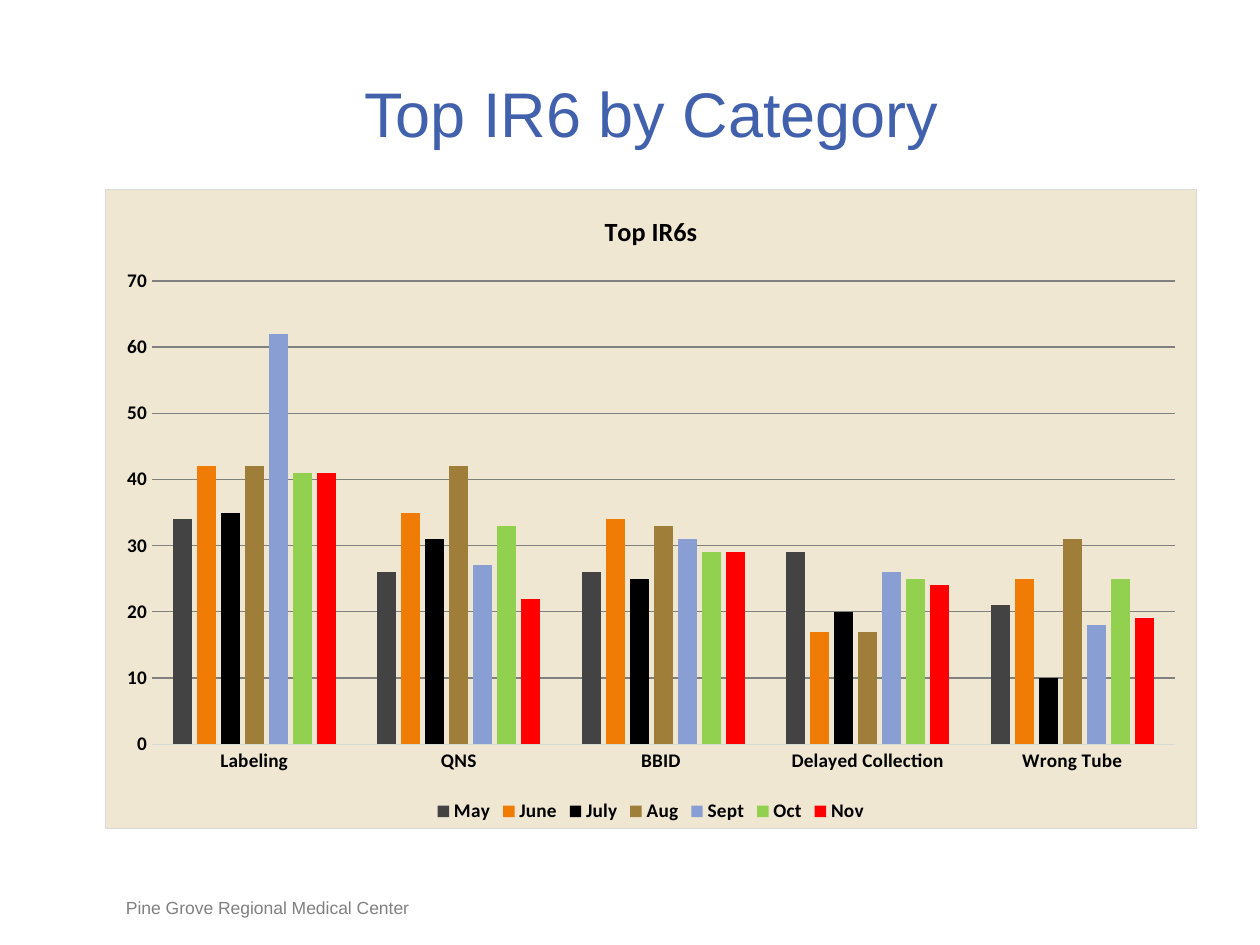
from lxml import etree
from pptx import Presentation
from pptx import util as u
from pptx.chart.data import CategoryChartData
from pptx.dml.color import RGBColor
from pptx.enum import chart as charts, text

CATEGORIES = ["Labeling", "QNS", "BBID ", "Delayed Collection", "Wrong Tube"]
MONTHS = [
    ("May", "434343", (34, 26, 26, 29, 21)),
    ("June", "F07B05", (42, 35, 34, 17, 25)),
    ("July", "000000", (35, 31, 25, 20, 10)),
    ("Aug", "9E7E38", (42, 42, 33, 17, 31)),
    ("Sept", "899ED2", (62, 27, 31, 26, 18)),
    ("Oct", "92D050", (41, 33, 29, 25, 25)),
    ("Nov", "FF0000", (41, 22, 29, 24, 19)),
]
CHART_AREA = """<c:spPr
  xmlns:c="http://schemas.openxmlformats.org/drawingml/2006/chart"
  xmlns:a="http://schemas.openxmlformats.org/drawingml/2006/main">
  <a:solidFill><a:srgbClr val="F0E7D3"/></a:solidFill>
  <a:ln w="9525"><a:solidFill><a:srgbClr val="D9D9D9"/></a:solidFill></a:ln>
</c:spPr>"""


def rgb(color):
    return RGBColor.from_string(color)


def set_font(font, name, size, color, bold=False):
    font.name, font.size, font.bold = name, u.Pt(size), bold
    font.color.rgb = rgb(color)


def set_line(line, color):
    line.color.rgb = rgb(color)
    line.width = u.Pt(0.75)


def add_text(slide, words, left, top, width, height, size, color, align):
    frame = slide.shapes.add_textbox(
        u.Cm(left), u.Cm(top), u.Cm(width), u.Cm(height)).text_frame
    frame.word_wrap = True
    frame.vertical_anchor = text.MSO_ANCHOR.BOTTOM
    frame.margin_left = frame.margin_right = 0
    frame.margin_top = frame.margin_bottom = 0
    paragraph = frame.paragraphs[0]
    paragraph.text = words
    paragraph.alignment = align
    set_font(paragraph.font, "Arial", size, color)


def style_axes(chart):
    for axis in (chart.category_axis, chart.value_axis):
        axis.major_tick_mark = axis.minor_tick_mark = charts.XL_TICK_MARK.NONE
        set_font(axis.tick_labels.font, "Calibri", 11, "000000", True)
    set_line(chart.category_axis.format.line, "D9D9D9")
    values = chart.value_axis
    values.format.line.fill.background()
    values.minimum_scale, values.maximum_scale, values.major_unit = 0, 70, 10
    values.has_major_gridlines = True
    set_line(values.major_gridlines.format.line, "808080")


def add_category_chart(slide):
    data = CategoryChartData()
    data.categories = CATEGORIES
    for month, _, counts in MONTHS:
        data.add_series(month, counts)
    chart = slide.shapes.add_chart(
        charts.XL_CHART_TYPE.COLUMN_CLUSTERED,
        u.Cm(2.11), u.Cm(3.81), u.Cm(22.02), u.Cm(12.9), data).chart
    set_font(chart.font, "Calibri", 10, "000000")
    chart._chartSpace.chart.addnext(etree.fromstring(CHART_AREA))

    chart.has_title = True
    heading = chart.chart_title.text_frame.paragraphs[0]
    heading.text = "Top IR6s"
    set_font(heading.font, "Calibri", 15, "000000", True)
    chart.chart_title.include_in_layout = False

    chart.has_legend = True
    chart.legend.position = charts.XL_LEGEND_POSITION.BOTTOM
    chart.legend.include_in_layout = False
    set_font(chart.legend.font, "Calibri", 11, "000000", True)

    style_axes(chart)
    plot = chart.plots[0]
    plot.gap_width, plot.overlap = 219, -27
    plot.vary_by_categories = False
    for series, (_, color, _) in zip(plot.series, MONTHS):
        series.format.fill.solid()
        series.format.fill.fore_color.rgb = rgb(color)


def main():
    deck = Presentation()
    deck.slide_width, deck.slide_height = u.Cm(25.4), u.Cm(19.05)
    slide = deck.slides.add_slide(deck.slide_layouts[6])
    add_text(slide, "Pine Grove Regional Medical Center", 2.54, 18.08, 8.05, 0.43,
             10, "808080", text.PP_ALIGN.LEFT)
    add_text(slide, "Top IR6 by Category", 2.34, 1.47, 21.59, 1.55,
             36, "4261AD", text.PP_ALIGN.CENTER)
    add_category_chart(slide)
    deck.save("out.pptx")


if __name__ == "__main__":
    main()
